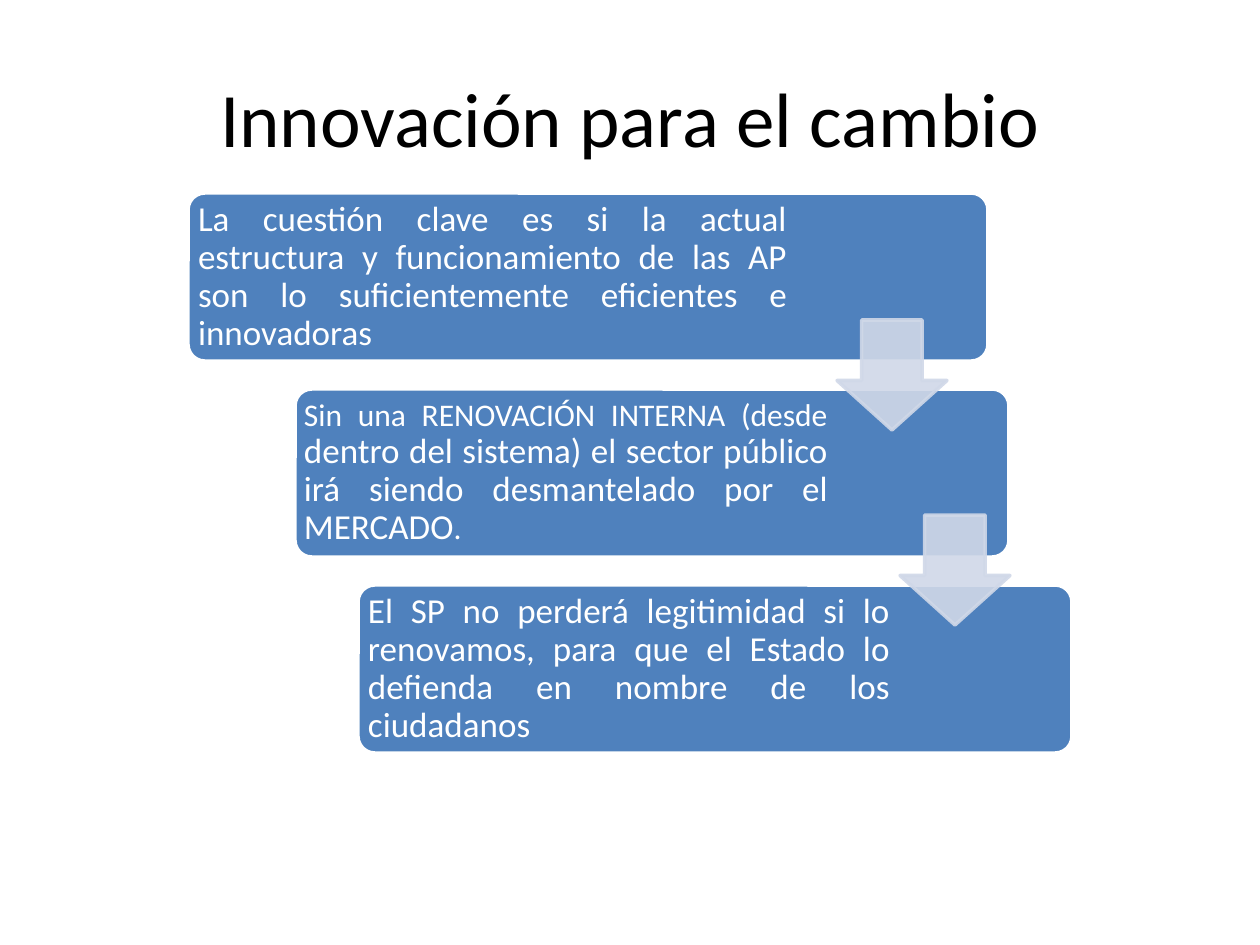
import pptx
import pptx.dml.color
import pptx.enum.shapes
import pptx.enum.text
import pptx.oxml.ns
import pptx.util
from lxml import etree

COLORS = {"title": "000000", "box": "4F81BD", "light": "FFFFFF", "arrow": "D0D8E8"}
STEPS = [
    (188, 800, 609, 10, [("La cuestión clave es si la actual estructura y funcionamiento de las AP "
                          "son lo suficientemente eficientes e innovadoras", 20)]),
    (295, 714, 542, 9, [("Sin una RENOVACIÓN INTERNA (desde ", 18),
                        ("dentro del sistema) el sector público irá siendo desmantelado "
                         "por el MERCADO", 20),
                        (".", 18)]),
    (358, 714, 542, 10, [("El SP no perderá legitimidad si lo renovamos, para que el Estado lo "
                          "defienda en nombre de los ciudadanos", 20)]),
]
STEP_TOP, STEP_PITCH, STEP_HEIGHT = 193, 196, 168
ARROW_LEFTS, ARROW_TOP, ARROW_PITCH, ARROW_SIZE = (837, 900), 320, 195, 110


class SlideBuilder:
    """Holds the style and the current slide, and draws each kind of element."""

    font = "Calibri"
    scale = 914400 / 126

    def __init__(self, presentation):
        presentation.slide_width = self.emu(1260)
        presentation.slide_height = self.emu(945)
        self.slide = presentation.slides.add_slide(presentation.slide_layouts[6])

    def emu(self, pixels):
        return pptx.util.Emu(round(pixels * self.scale))

    def color(self, name):
        return pptx.dml.color.RGBColor.from_string(COLORS[name])

    def shape(self, kind, bounds, adjustments, fill, line):
        shape = self.slide.shapes.add_shape(kind, *map(self.emu, bounds))
        shape.shadow.inherit = False
        for index, value in enumerate(adjustments):
            shape.adjustments[index] = value
        shape.fill.solid()
        shape.fill.fore_color.rgb = self.color(fill)
        shape.line.color.rgb = self.color(line)
        shape.line.width = pptx.util.Pt(2)
        return shape

    def box(self, *bounds):
        self.shape(pptx.enum.shapes.MSO_SHAPE.ROUNDED_RECTANGLE, bounds, [0.1], "box", "light")

    def arrow(self, *bounds):
        shape = self.shape(pptx.enum.shapes.MSO_SHAPE.DOWN_ARROW, bounds, [0.55, 0.45],
                           "arrow", "arrow")
        for color in shape.element.spPr.iter(pptx.oxml.ns.qn("a:srgbClr")):
            etree.SubElement(color, pptx.oxml.ns.qn("a:alpha"), val="90000")

    def text(self, bounds, runs, color, alignment, inset, spacing=1.0):
        frame = self.slide.shapes.add_textbox(*map(self.emu, bounds)).text_frame
        frame.word_wrap = True
        frame.vertical_anchor = pptx.enum.text.MSO_ANCHOR.MIDDLE
        frame.margin_left = frame.margin_right = self.emu(inset)
        frame.margin_top = frame.margin_bottom = self.emu(inset)
        paragraph = frame.paragraphs[0]
        paragraph.alignment = alignment
        paragraph.line_spacing = spacing
        paragraph.font.name = self.font
        paragraph.font.color.rgb = self.color(color)
        paragraph.font.size = pptx.util.Pt(runs[0][1])
        for words, size in runs:
            run = paragraph.add_run()
            run.text = words
            if size != runs[0][1]:
                run.font.size = pptx.util.Pt(size)


def main():
    presentation = pptx.Presentation()
    builder = SlideBuilder(presentation)
    align = pptx.enum.text.PP_ALIGN
    builder.text((63, 38, 1134, 158), [("Innovación para el cambio", 44)], "title",
                 align.CENTER, 6)
    for index, (left, width, text_width, inset, runs) in enumerate(STEPS):
        top = STEP_TOP + index * STEP_PITCH
        builder.box(left, top, width, STEP_HEIGHT)
        builder.text((left, top, text_width, STEP_HEIGHT), runs, "light",
                     align.JUSTIFY, inset, 0.9)
    for index, left in enumerate(ARROW_LEFTS):
        builder.arrow(left, ARROW_TOP + index * ARROW_PITCH, ARROW_SIZE, ARROW_SIZE)
    presentation.save("out.pptx")


if __name__ == "__main__":
    main()
